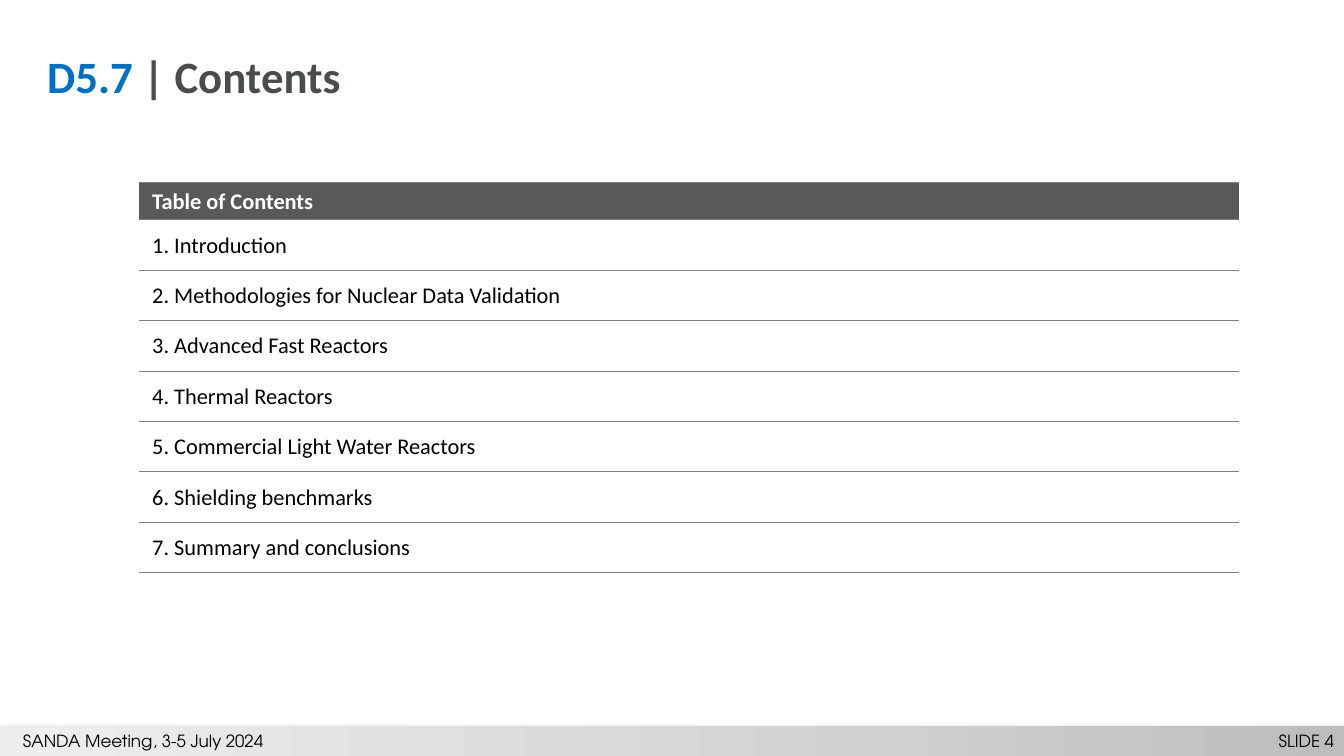
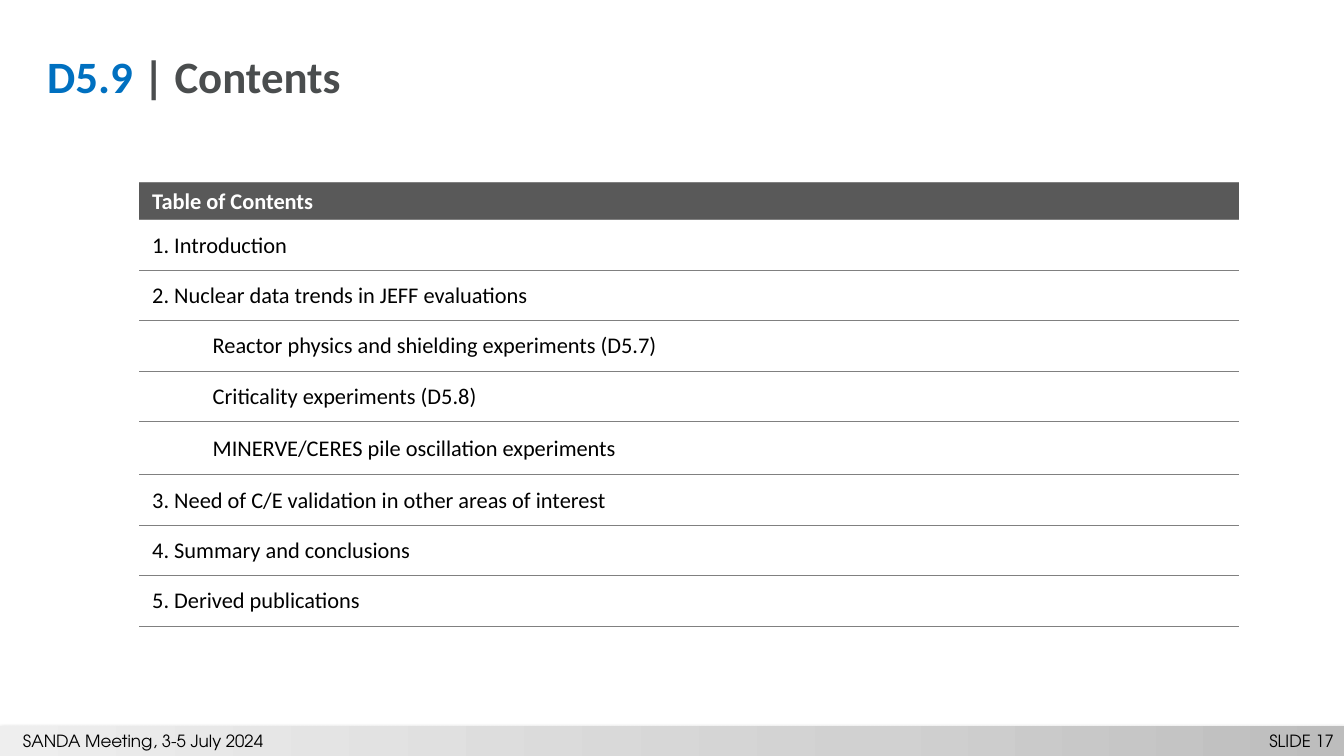
from lxml.etree import SubElement
from pptx import Presentation
from pptx.dml.color import RGBColor
from pptx.enum.text import MSO_ANCHOR, PP_ALIGN
from pptx.oxml import parse_xml
from pptx.oxml.ns import nsdecls, qn
from pptx.util import Inches, Pt

DECKS = [
    {"code": "D5.7", "number": 4, "entries": [
        "1. Introduction",
        "2. Methodologies for Nuclear Data Validation",
        "3. Advanced Fast Reactors",
        "4. Thermal Reactors",
        "5. Commercial Light Water Reactors",
        "6. Shielding benchmarks",
        "7. Summary and conclusions",
    ]},
    {"code": "D5.9", "number": 17, "tall_row": 5, "entries": [
        "1. Introduction",
        "2. Nuclear data trends in JEFF evaluations",
        ("Reactor physics and shielding experiments (D5.7)",),
        ("Criticality experiments (D5.8)",),
        ("MINERVE/CERES pile oscillation experiments",),
        "3. Need of C/E validation in other areas of interest",
        "4. Summary and conclusions",
        "5. Derived publications",
    ]},
]
HEADING = "Table of Contents"
MEETING = "SANDA Meeting, 3-5 July 2024"

COLORS = {"accent": "0070C0", "title": "4A4D4E", "header": "595959", "rule": "808080",
          "white": "FFFFFF", "black": "000000"}
BAND_STOPS = [(0, "BDBDBD"), (35, "D1D1D1"), (100, "EEEEEE")]
BODY_FONT, FOOTER_FONT = "Calibri", "TeX Gyre Adventor"
WIDTH, HEIGHT, BAND = 13.33, 7.5, 0.3
TABLE_LEFT, TABLE_TOP, COLUMNS = 1.38, 1.81, (9.67, 1.24)
HEADER_ROW, ROW, TALL_ROW = 0.37, 0.5, 0.53
INDENT, SUB_INDENT = 0.12, 0.72
PLAIN_TABLE = "{2D5ABB26-0587-4C30-8999-92F81FD0307C}"


def rgb(name):
    return RGBColor.from_string(COLORS[name])


def style(font, face, size, color, bold=False):
    font.name, font.size, font.bold = face, Pt(size), bold
    font.color.rgb = rgb(color)


def add_line(slide, box, runs, face, size, bold=False, align=PP_ALIGN.LEFT):
    frame = slide.shapes.add_textbox(*map(Inches, box)).text_frame
    frame.word_wrap = True
    frame.vertical_anchor = MSO_ANCHOR.MIDDLE
    frame.margin_top = frame.margin_bottom = 0
    line = frame.paragraphs[0]
    line.alignment = align
    for text, color in runs:
        run = line.add_run()
        run.text = text
        style(run.font, face, size, color, bold)
    return line


def add_footer(slide, number):
    top = HEIGHT - BAND
    band = slide.shapes.add_shape(1, 0, Inches(top), Inches(WIDTH), Inches(BAND))
    band.line.fill.background()
    band.fill.gradient()
    band.fill.gradient_angle = 180
    properties = band.fill._xPr
    stops = properties.find(qn("a:gradFill")).find(qn("a:gsLst"))
    for stop in list(stops):
        stops.remove(stop)
    for position, color in BAND_STOPS:
        stop = SubElement(stops, qn("a:gs"), pos=str(position * 1000))
        SubElement(stop, qn("a:srgbClr"), val=color)
    band.shadow.inherit = False
    properties.find(qn("a:effectLst")).append(parse_xml(
        f'<a:outerShdw {nsdecls("a")} blurRad="{Pt(3.1)}" dist="{Pt(1.6)}" dir="5400000" '
        f'rotWithShape="0"><a:srgbClr val="{COLORS["black"]}"><a:alpha val="38000"/>'
        '</a:srgbClr></a:outerShdw>'))
    add_line(slide, (10.22, 7.24, 3.11, 0.21), [(f"SLIDE {number}", "black")],
             FOOTER_FONT, 12, align=PP_ALIGN.RIGHT)
    add_line(slide, (0.13, top, 11.06, BAND), [(MEETING, "black")], FOOTER_FONT, 12)


def add_rule(cell, side):
    cell._tc.get_or_add_tcPr().append(parse_xml(
        f'<a:{side} {nsdecls("a")} w="{Pt(0.5)}"><a:solidFill>'
        f'<a:srgbClr val="{COLORS["rule"]}"/></a:solidFill></a:{side}>'))


def fill_cell(cell, text, is_header, indent):
    cell.margin_left = cell.margin_top = cell.margin_right = Inches(0.01)
    cell.margin_bottom = 0
    cell.vertical_anchor = MSO_ANCHOR.MIDDLE
    if is_header:
        add_rule(cell, "lnT")
    add_rule(cell, "lnB")
    cell.fill.solid()
    cell.fill.fore_color.rgb = rgb("header" if is_header else "white")
    cell.text = text
    line = cell.text_frame.paragraphs[0]
    style(line.font, BODY_FONT, 16, "white" if is_header else "black", is_header)
    line._p.get_or_add_pPr().set("marL", str(Inches(indent)))


def add_contents(slide, entries, tall_row=None):
    lines = [HEADING, *entries]
    heights = [HEADER_ROW] + [TALL_ROW if row == tall_row else ROW
                              for row in range(1, len(lines))]
    table = slide.shapes.add_table(
        len(lines), len(COLUMNS), Inches(TABLE_LEFT), Inches(TABLE_TOP),
        Inches(sum(COLUMNS)), Inches(sum(heights))).table
    table._tbl.tblPr.find(qn("a:tableStyleId")).text = PLAIN_TABLE
    table.horz_banding = False
    for column, width in zip(table.columns, COLUMNS):
        column.width = Inches(width)
    for row, (entry, height) in enumerate(zip(lines, heights)):
        table.rows[row].height = Inches(height)
        is_sub = isinstance(entry, tuple)
        text = entry[0] if is_sub else entry
        for column, words in enumerate((text, "")):
            fill_cell(table.cell(row, column), words, row == 0,
                      SUB_INDENT if is_sub else INDENT)


def main():
    deck = Presentation()
    deck.slide_width, deck.slide_height = Inches(WIDTH), Inches(HEIGHT)
    for part in DECKS:
        slide = deck.slides.add_slide(deck.slide_layouts[6])
        add_footer(slide, part["number"])
        add_contents(slide, part["entries"], part.get("tall_row"))
        title = add_line(slide, (0.37, 0.3, 11.76, 0.97),
                         [(part["code"] + " ", "accent"), ("| Contents", "title")],
                         BODY_FONT, 32, bold=True)
        title.line_spacing = 0.9
    deck.save("out.pptx")


if __name__ == "__main__":
    main()
